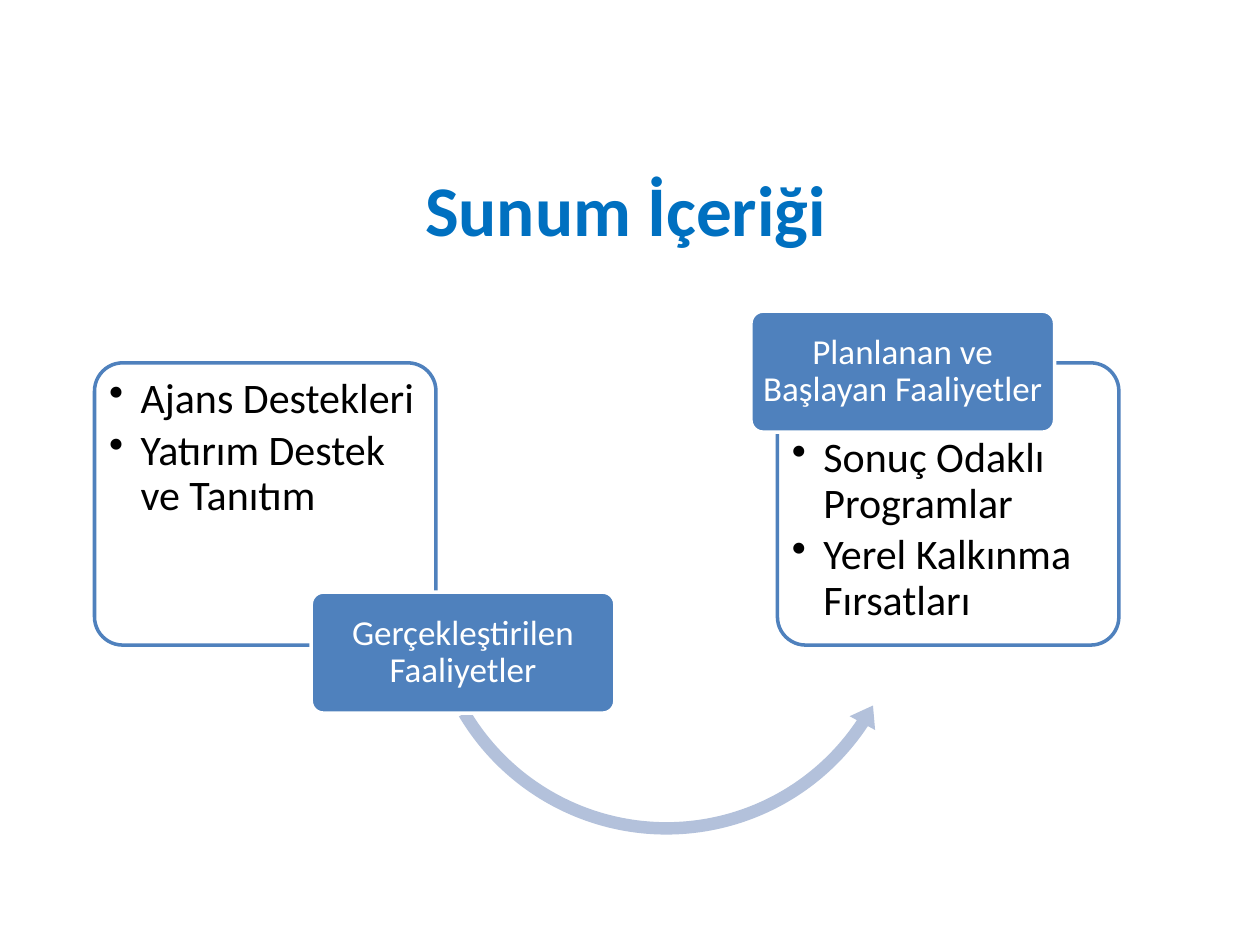
"""Build the agenda slide with two cards joined by a curved arrow."""
from lxml.etree import SubElement
from pptx import Presentation
from pptx.dml.color import RGBColor as RGB
from pptx.enum.shapes import MSO_SHAPE as Kind
from pptx.enum.text import MSO_ANCHOR as Anchor, MSO_AUTO_SIZE as Fit, PP_ALIGN as Align
from pptx.oxml.ns import qn
from pptx.util import Inches, Pt

BLUE, WHITE = "4F81BD", "FFFFFF"


def style(para, size, color, bold=False):
    for run in para.runs:
        font = run.font
        font.name, font.size, font.bold = "Calibri", Pt(size), bold
        font.color.rgb = RGB.from_string(color)


def add(kind, box, fill, line=None):
    shape = slide.shapes.add_shape(kind, *map(Inches, box))
    shape.shadow.inherit = False
    shape.fill.solid()
    shape.fill.fore_color.rgb = RGB.from_string(fill)
    if line:
        shape.line.color.rgb = RGB.from_string(line)
        shape.line.width = Pt(2)
        shape.adjustments[0] = 0.1
    else:
        shape.line.fill.background()
    return shape


deck = Presentation()
deck.slide_width, deck.slide_height = Inches(10), Inches(7.5)
slide = deck.slides.add_slide(deck.slide_layouts[5])

title = slide.shapes.title
title.left, title.top = Inches(0.28), Inches(1.31)
title.width, title.height = Inches(9.37), Inches(0.68)
frame = title.text_frame
frame.text = "Sunum İçeriği"
frame.auto_size = Fit.NONE
frame.vertical_anchor = Anchor.MIDDLE
frame.paragraphs[0].alignment = Align.CENTER
style(frame.paragraphs[0], 40.7, "0070C0", True)

arrow = add(Kind.LEFT_CIRCULAR_ARROW, (3.31, 2.73, 3.96, 3.96), "B3C1DB")
for i, value in enumerate((0.025, 3.011, 20.109, 89.589, 0.029)):
    arrow.adjustments[i] = value

cards = [
    (0.75, 0.05, ["Ajans Destekleri", "Yatırım Destek ve Tanıtım"],
     2.47, 4.7, "Gerçekleştirilen Faaliyetler"),
    (6.17, 0.52, ["Sonuç Odaklı Programlar", "Yerel Kalkınma Fırsatları"],
     5.96, 2.47, "Planlanan ve Başlayan Faaliyetler"),
]
for left, inset, items, x, y, name in cards:
    card = add(Kind.ROUNDED_RECTANGLE, (left, 2.88, 2.71, 2.24), WHITE, BLUE)
    frame = card.text_frame
    frame.text = "\n".join(items)
    frame.word_wrap = True
    frame.vertical_anchor = Anchor.TOP
    frame.margin_left = frame.margin_right = frame.margin_bottom = Inches(0.05)
    frame.margin_top = Inches(inset)
    for para in frame.paragraphs:
        props = para._p.get_or_add_pPr()
        props.set("marL", str(Inches(0.25)))
        props.set("indent", str(-Inches(0.25)))
        SubElement(props, qn("a:buChar")).set("char", "•")
        para.alignment = Align.LEFT
        para.line_spacing = 0.9
        para.space_after = Pt(3.6)
        style(para, 24, "000000")

    label = add(Kind.ROUNDED_RECTANGLE, (x, y, 2.41, 0.96), BLUE, WHITE)
    frame = label.text_frame
    frame.text = name
    frame.word_wrap = True
    frame.vertical_anchor = Anchor.MIDDLE
    frame.margin_left = frame.margin_right = Inches(0.04)
    frame.margin_top = frame.margin_bottom = Inches(0.03)
    para = frame.paragraphs[0]
    para.alignment = Align.CENTER
    para.line_spacing = 0.9
    style(para, 20, WHITE)

deck.save("out.pptx")
